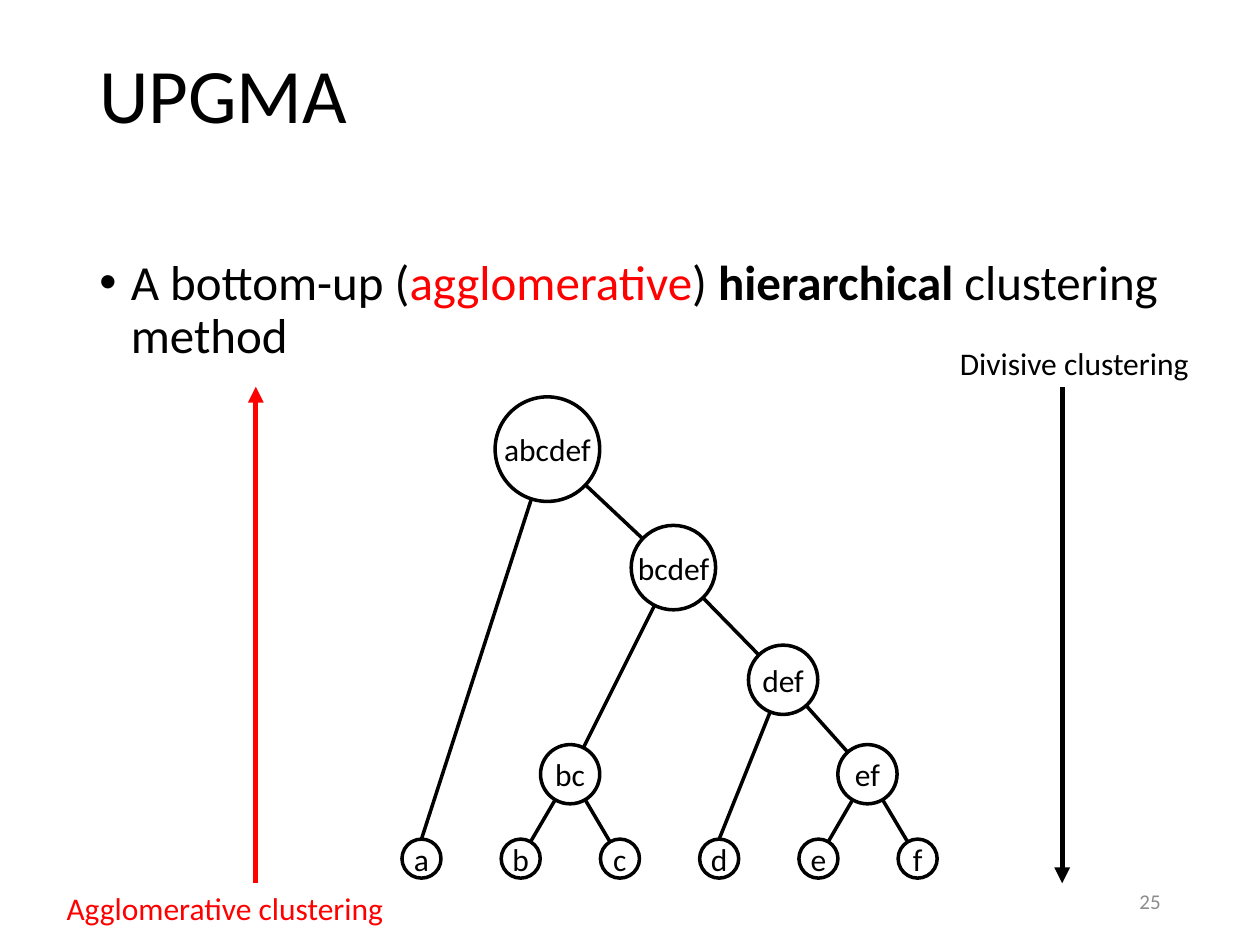
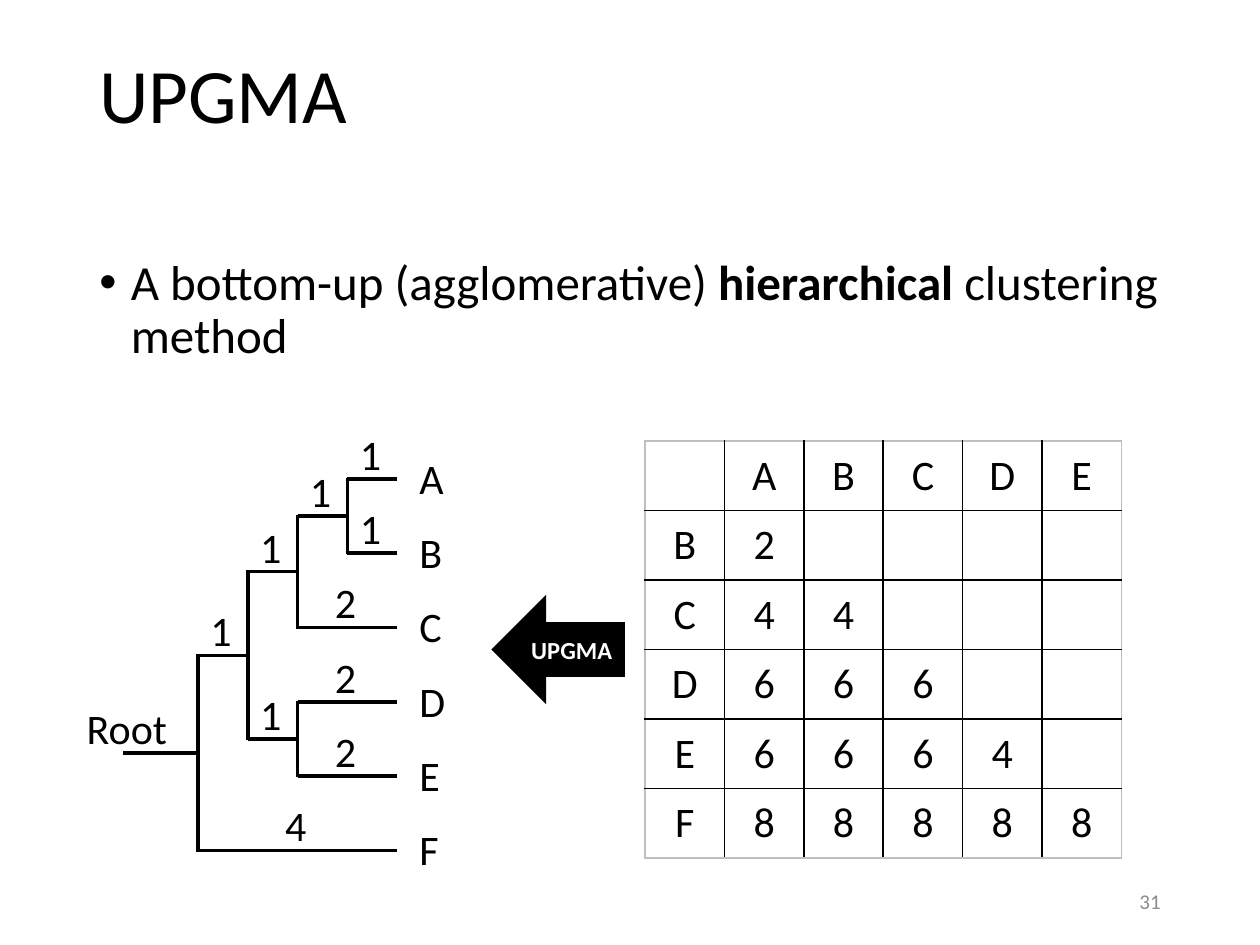
"""Build two slides that explain UPGMA clustering."""
import math
from dataclasses import dataclass
from typing import Any

import pptx
import pptx.dml.color
import pptx.enum.shapes
import pptx.enum.text
import pptx.oxml.ns
import pptx.util
from lxml import etree

Inches = pptx.util.Inches
Pt = pptx.util.Pt
Align = pptx.enum.text.PP_ALIGN
Anchor = pptx.enum.text.MSO_ANCHOR
Preset = pptx.enum.shapes.MSO_SHAPE

COLORS = {"ink": "000000", "accent": "FF0000", "paper": "FFFFFF", "number": "8C8C8C", "frame": "BFBFBF"}
FONT = "Calibri"
BODY_FORMAT = {"line_spacing": 0.9, "space_before": Pt(10)}
FRAME_FORMAT = {"word_wrap": True, "vertical_anchor": Anchor.TOP}
LABEL_FORMAT = {"word_wrap": False, "vertical_anchor": Anchor.TOP}
CELL_FORMAT = {"vertical_anchor": Anchor.MIDDLE, "margin_left": Inches(0.05), "margin_right": Inches(0.05)}


@dataclass(frozen=True)
class Span:
    text: str
    size: float
    color: str = "ink"
    bold: bool = False


@dataclass(frozen=True)
class Area:
    left: float
    top: float
    width: float
    height: float

    def lengths(self) -> tuple:
        return tuple(Inches(v) for v in (self.left, self.top, self.width, self.height))


@dataclass(frozen=True)
class Cluster:
    name: str
    x: float
    y: float
    diameter: float
    label_width: float


@dataclass(frozen=True)
class Clade:
    length: float
    name: str = ""
    members: tuple["Clade", ...] = ()


@dataclass(frozen=True)
class Direction:
    text: str
    color: str
    label: Area
    x: float
    start: float
    end: float


LEAF_Y, LEAF_DIAMETER = 6.815, 0.31
LEAVES = [Cluster(name, 3.345 + 0.7876 * i, LEAF_Y, LEAF_DIAMETER, 0.33) for i, name in enumerate("abcdef")]
MERGED = [
    Cluster("bc", 4.525, 6.145, 0.47, 0.44),
    Cluster("ef", 6.885, 6.145, 0.47, 0.4),
    Cluster("def", 6.215, 5.395, 0.55, 0.54),
    Cluster("bcdef", 5.345, 4.505, 0.67, 0.78),
    Cluster("abcdef", 4.345, 3.565, 0.83, 0.9),
]
MERGES = {"abcdef": ("a", "bcdef"), "bcdef": ("bc", "def"), "def": ("d", "ef"), "bc": ("b", "c"), "ef": ("e", "f")}
DIRECTIONS = [
    Direction("Agglomerative clustering", "accent", Area(0.43, 7.01, 2.74, 0.4), 2.03, 7.01, 3.07),
    Direction("Divisive clustering", "ink", Area(7.52, 2.68, 2.04, 0.4), 8.43, 3.07, 7.01),
]

PAIR_AB = Clade(1, members=(Clade(1, "A"), Clade(1, "B")))
TRIPLE_ABC = Clade(1, members=(PAIR_AB, Clade(2, "C")))
PAIR_DE = Clade(1, members=(Clade(2, "D"), Clade(2, "E")))
ROOT = Clade(1.5, members=(Clade(1, members=(TRIPLE_ABC, PAIR_DE)), Clade(4, "F")))
TREE_LEFT, TREE_UNIT, LEAF_TOP, LEAF_STEP = 0.98, 0.395, 3.8, 0.59
DISTANCES = [" ABCDE", "B2", "C44", "D666", "E6664", "F88888"]


def rgb(name: str) -> Any:
    """Return a palette colour."""
    return pptx.dml.color.RGBColor.from_string(COLORS[name])


def apply_format(target: Any, values: dict[str, Any]) -> None:
    """Set each format value on the target."""
    for name, value in values.items():
        setattr(target, name, value)


def add_spans(para: Any, spans: list[Span], align: Any = Align.LEFT) -> None:
    """Write styled spans into a paragraph."""
    para.alignment = align
    for span in spans:
        run = para.add_run()
        run.text = span.text
        apply_format(run.font, {"name": FONT, "size": Pt(span.size), "bold": span.bold})
        run.font.color.rgb = rgb(span.color)


def add_text(page: Any, area: Area, spans: list[Span], align: Any = Align.LEFT,
             layout: dict[str, Any] = LABEL_FORMAT) -> Any:
    """Add a text box and return its paragraph."""
    frame = page.shapes.add_textbox(*area.lengths()).text_frame
    apply_format(frame, layout)
    para = frame.paragraphs[0]
    add_spans(para, spans, align)
    return para


def add_line(page: Any, start: tuple[float, float], end: tuple[float, float], width: float = 2,
             color: str = "ink", arrow: bool = False) -> None:
    """Draw a straight line, with an arrowhead at its end if asked."""
    line = page.shapes.add_connector(
        pptx.enum.shapes.MSO_CONNECTOR.STRAIGHT, *(Inches(value) for value in start + end))
    line.line.width = Pt(width)
    line.line.color.rgb = rgb(color)
    if arrow:
        etree.SubElement(line.line._get_or_add_ln(), pptx.oxml.ns.qn("a:tailEnd"), type="triangle")
    etree.SubElement(line._element.spPr, pptx.oxml.ns.qn("a:effectLst"))


def add_page(deck: Any, number: str, term_color: str) -> Any:
    """Add a page with the shared title, bullet and page number."""
    page = deck.slides.add_slide(deck.slide_layouts[6])
    spans = [Span("A bottom-up (", 28), Span("agglomerative", 28, term_color), Span(") ", 28),
             Span("hierarchical ", 28, bold=True), Span("clustering method", 28)]
    body = add_text(page, Area(0.69, 2, 8.62, 4.76), spans, layout=FRAME_FORMAT)
    apply_format(body, BODY_FORMAT)
    properties = body._p.get_or_add_pPr()
    properties.set("marL", str(Inches(0.25)))
    properties.set("indent", str(Inches(-0.25)))
    etree.SubElement(properties, pptx.oxml.ns.qn("a:buFont"), typeface="Arial")
    etree.SubElement(properties, pptx.oxml.ns.qn("a:buChar"), char="•")
    title = add_text(page, Area(0.69, 0.4, 8.62, 1.45), [Span("UPGMA", 44)], layout=FRAME_FORMAT)
    title.line_spacing = 0.9
    add_text(page, Area(7.06, 6.95, 2.25, 0.4), [Span(number, 12, "number")], Align.RIGHT,
             {"word_wrap": True, "vertical_anchor": Anchor.MIDDLE})
    return page


def add_cluster(page: Any, cluster: Cluster) -> None:
    """Draw a cluster circle with its label."""
    size = cluster.diameter
    area = Area(cluster.x - size / 2, cluster.y - size / 2, size, size)
    circle = page.shapes.add_shape(Preset.OVAL, *area.lengths())
    circle.shadow.inherit = False
    circle.fill.solid()
    circle.fill.fore_color.rgb = rgb("paper")
    circle.line.color.rgb = rgb("ink")
    circle.line.width = Pt(2)
    label = Area(cluster.x - cluster.label_width / 2, cluster.y - 0.2, cluster.label_width, 0.4)
    add_text(page, label, [Span(cluster.name, 18)], Align.CENTER)


def add_merge(page: Any, parent: Cluster, child: Cluster) -> None:
    """Join a parent to a child, stopping at the rim of a leaf."""
    end = (child.x, child.y)
    if child.y == LEAF_Y:
        radius = child.diameter / 2
        distance = math.dist((parent.x, parent.y), end)
        end = (child.x + (parent.x - child.x) / distance * radius,
               child.y + (parent.y - child.y) / distance * radius)
        if child.name in ("a", "d"):
            end = (child.x, child.y - radius)
    add_line(page, (parent.x, parent.y), end)


def add_clade(page: Any, clade: Clade, left: float, next_leaf: float) -> tuple[float, float]:
    """Draw a clade and return its height and the next free leaf height."""
    right = left + clade.length * TREE_UNIT
    y = next_leaf
    if clade.members:
        heights = []
        for member in clade.members:
            height, next_leaf = add_clade(page, member, right, next_leaf)
            heights.append(height)
        y = sum(heights) / len(heights)
        add_line(page, (right, heights[0] - 0.01), (right, heights[-1] + 0.01))
    else:
        next_leaf += LEAF_STEP
        add_text(page, Area(3.23, y - 0.26, 0.39, 0.5), [Span(clade.name, 24)])
    add_line(page, (left, y), (right, y))
    if clade is ROOT:
        add_text(page, Area(0.59, y - 0.45, 0.84, 0.5), [Span("Root", 24)])
    else:
        label = Area((left + right) / 2 - 0.2, y - 0.45, 0.37, 0.5)
        add_text(page, label, [Span(str(clade.length), 24)], Align.CENTER)
    return y, next_leaf


def add_border(cell: Any, edge: str, color: str) -> None:
    """Draw one border of a table cell."""
    properties = cell._tc.get_or_add_tcPr()
    line = etree.SubElement(properties, pptx.oxml.ns.qn(f"a:ln{edge}"), w=str(Pt(1)))
    fill = etree.SubElement(line, pptx.oxml.ns.qn("a:solidFill"))
    etree.SubElement(fill, pptx.oxml.ns.qn("a:srgbClr"), val=COLORS[color])


def add_distances(page: Any, area: Area) -> None:
    """Add the table of pairwise distances."""
    count = len(DISTANCES)
    table = page.shapes.add_table(count, count, *area.lengths()).table
    apply_format(table, {"first_row": False, "horz_banding": False})
    for index in range(count):
        table.columns[index].width = Inches(area.width / count)
        table.rows[index].height = Inches(area.height / count)
    for row, values in enumerate(DISTANCES):
        for column, value in enumerate(values.ljust(count)):
            cell = table.cell(row, column)
            apply_format(cell, CELL_FORMAT)
            outer = {"L": column == 0, "R": column == count - 1, "T": row == 0, "B": row == count - 1}
            for edge, is_outer in outer.items():
                add_border(cell, edge, "frame" if is_outer else "ink")
            cell.fill.background()
            if value.strip():
                add_spans(cell.text_frame.paragraphs[0], [Span(value, 24)], Align.CENTER)


def add_method_arrow(page: Any, area: Area) -> None:
    """Add the arrow that leads from the table to the tree."""
    arrow = page.shapes.add_shape(Preset.LEFT_ARROW, *area.lengths())
    arrow.shadow.inherit = False
    arrow.fill.solid()
    arrow.fill.fore_color.rgb = rgb("ink")
    arrow.line.fill.background()
    apply_format(arrow.text_frame, {"word_wrap": True, "vertical_anchor": Anchor.MIDDLE})
    add_spans(arrow.text_frame.paragraphs[0], [Span("UPGMA", 14, "paper", True)], Align.CENTER)


def build_clustering(deck: Any) -> None:
    """Build the page on clustering directions."""
    page = add_page(deck, "25", "accent")
    clusters = {cluster.name: cluster for cluster in LEAVES + MERGED}
    for parent, children in MERGES.items():
        for child in children:
            add_merge(page, clusters[parent], clusters[child])
    for cluster in clusters.values():
        add_cluster(page, cluster)
    for way in DIRECTIONS:
        add_text(page, way.label, [Span(way.text, 18, way.color)])
        add_line(page, (way.x, way.start), (way.x, way.end), 3, way.color, arrow=True)


def build_tree(deck: Any) -> None:
    """Build the page with the distances and their tree."""
    page = add_page(deck, "31", "ink")
    add_clade(page, ROOT, TREE_LEFT, LEAF_TOP)
    add_distances(page, Area(5.12, 3.5, 3.78, 3.31))
    add_method_arrow(page, Area(3.9, 4.72, 1.06, 0.87))


def main() -> None:
    """Build and save the deck."""
    deck = pptx.Presentation()
    apply_format(deck, {"slide_width": Inches(10), "slide_height": Inches(7.5)})
    build_clustering(deck)
    build_tree(deck)
    deck.save("out.pptx")


if __name__ == "__main__":
    main()
